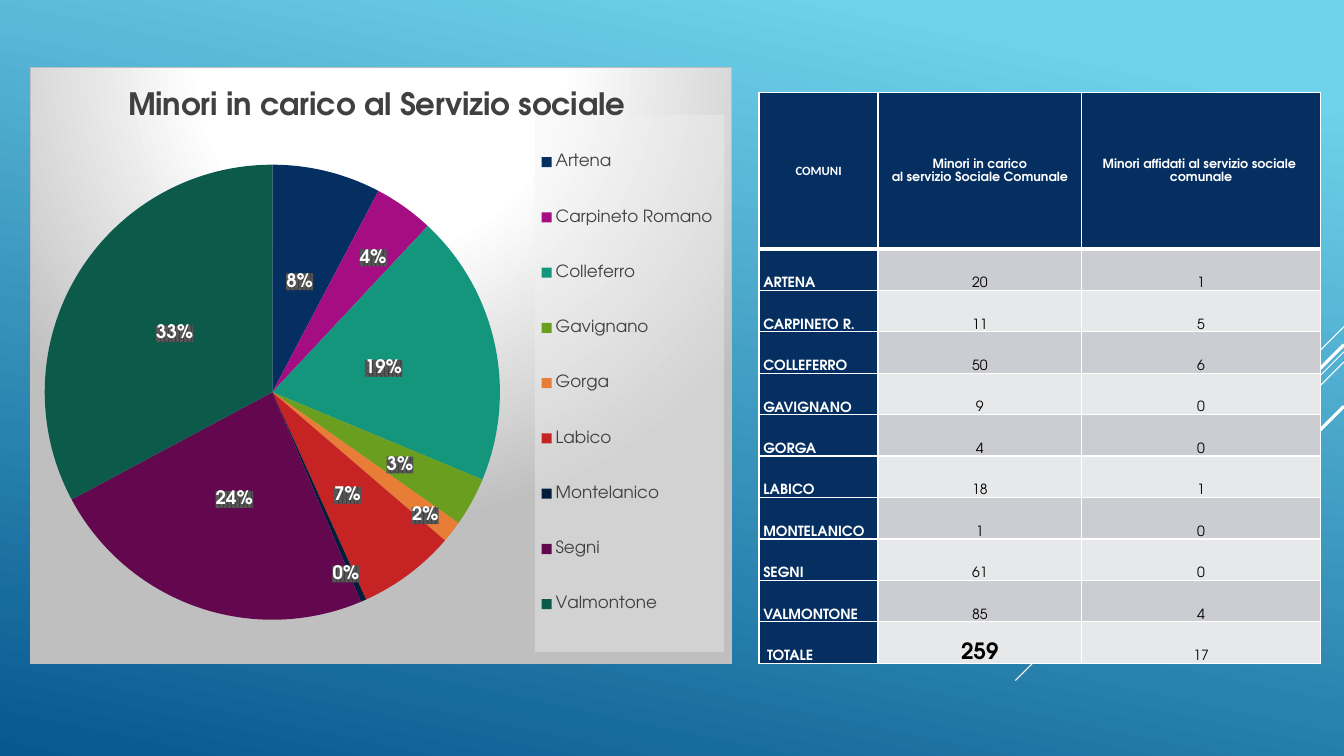
import copy
import dataclasses
import typing

import pptx
import pptx.chart.data
import pptx.dml.color
import pptx.enum.chart
import pptx.enum.shapes
import pptx.enum.text
import pptx.oxml
import pptx.oxml.ns
import pptx.util

Pt = pptx.util.Pt
FACE = "TeX Gyre Adventor"
WHITE, BLACK, NAVY, GREY = "FFFFFF", "000000", "052F61", "404040"
TITLE = "Minori in carico al Servizio sociale "


@dataclasses.dataclass
class Ray:
    top: float
    run: float
    width: float


@dataclasses.dataclass
class Town:
    label: str
    name: str
    cared: int
    placed: int
    tint: str
    shift: typing.Optional[tuple[float, float]] = None


@dataclasses.dataclass
class Style:
    size: float
    tint: str
    bold: bool = False
    face: str = FACE


RAYS = [
    Ray(233.3, 72, 0.75),
    Ray(251.3, 234.7, 0.75),
    Ray(258.5, 149.4, 0.75),
    Ray(246.2, 137.5, 2.25),
    Ray(290.2, 100.1, 2.25),
]
TOWNS = [
    Town("ARTENA", "Artena", 20, 1, NAVY),
    Town("CARPINETO R.", "Carpineto Romano ", 11, 5, "A50E82", (0.05, -0.07)),
    Town("COLLEFERRO", "Colleferro", 50, 6, "14967C"),
    Town("GAVIGNANO", "Gavignano", 9, 0, "6A9E1F", (0.04, 0.03)),
    Town("GORGA", "Gorga ", 4, 0, "E87D37", (0.09, 0.09)),
    Town("LABICO", "Labico ", 18, 1, "C62324", (0.01, 0.02)),
    Town("MONTELANICO", "Montelanico ", 1, 0, "031C3A", (0.04, 0.13)),
    Town("SEGNI", "Segni ", 61, 0, "63084E"),
    Town("VALMONTONE", "Valmontone ", 85, 4, "0C5A4A"),
]
HEADS = ["COMUNI", "Minori in carico\nal servizio Sociale Comunale",
         "Minori affidati al servizio sociale \ncomunale"]


def shade(text: str) -> pptx.dml.color.RGBColor:
    return pptx.dml.color.RGBColor.from_string(text)


def node(tag: str, body: str, extra: str = "") -> typing.Any:
    space = pptx.oxml.ns.nsdecls("a", "c")
    return pptx.oxml.parse_xml(f"<{tag} {space} {extra}>{body}</{tag}>")


def solid(tint: str, more: str = "") -> str:
    return f'<a:solidFill><a:srgbClr val="{tint}">{more}</a:srgbClr></a:solidFill>'


def dress(font: typing.Any, style: Style) -> None:
    font.size, font.bold, font.name = Pt(style.size), style.bold, style.face
    font.color.rgb = shade(style.tint)


def layout(x: float, y: float, size: typing.Optional[tuple[float, float]] = None,
           inner: bool = False) -> typing.Any:
    body = '<c:layoutTarget val="inner"/>' if inner else ""
    if size:
        body += '<c:xMode val="edge"/><c:yMode val="edge"/>'
    body += f'<c:x val="{x}"/><c:y val="{y}"/>'
    if size:
        body += f'<c:w val="{size[0]}"/><c:h val="{size[1]}"/>'
    return node("c:layout", f"<c:manualLayout>{body}</c:manualLayout>")


def draw_ray(slide: typing.Any, ray: Ray) -> None:
    line = slide.shapes.add_connector(
        pptx.enum.shapes.MSO_CONNECTOR.STRAIGHT,
        Pt(960), Pt(ray.top), Pt(960 - ray.run), Pt(ray.top + ray.run))
    line.line.color.rgb = shade(WHITE)
    line.line.width = Pt(ray.width)
    line.element.spPr.append(node("a:effectLst", ""))


def fill_cell(cell: typing.Any, text: str, style: Style, back: str,
              head: bool, left: bool) -> None:
    anchor, align = pptx.enum.text.MSO_ANCHOR, pptx.enum.text.PP_ALIGN
    cell.vertical_anchor = anchor.MIDDLE if head else anchor.BOTTOM
    cell.margin_left = cell.margin_right = Pt(3)
    cell.margin_top = cell.margin_bottom = Pt(0)
    para = cell.text_frame.paragraphs[0]
    para.alignment = align.LEFT if left else align.CENTER
    para.line_spacing, para.space_after = 1.15, Pt(10)
    for i, part in enumerate(text.split("\n")):
        if i:
            para.add_line_break()
        run = para.add_run()
        run.text = part
        dress(run.font, style)
    props = cell._tc.get_or_add_tcPr()
    for side in "LRTB":
        width = Pt(3 if head and side == "B" else 1)
        props.append(node(f"a:ln{side}", solid(WHITE), f'w="{width}"'))
    cell.fill.solid()
    cell.fill.fore_color.rgb = shade(back)


def draw_table(slide: typing.Any) -> None:
    total = ("\u00a0TOTALE".replace("\u00a0", " "), sum(t.cared for t in TOWNS), sum(t.placed for t in TOWNS))
    rows = [HEADS, *[(t.label, t.cared, t.placed) for t in TOWNS], total]
    table = slide.shapes.add_table(
        len(rows), 3, Pt(542.2), Pt(65.8), Pt(401), Pt(408)).table
    for col, width in zip(table.columns, (85, 145.4, 170.6)):
        col.width = Pt(width)
    for r, row in enumerate(rows):
        table.rows[r].height = Pt(29.6 if r else 112)
        for c, value in enumerate(row):
            head, last = r == 0, r == len(rows) - 1
            if head:
                style = Style(9, WHITE, True, FACE if c else "Calibri")
            elif c == 0:
                style = Style(10, WHITE, True)
            else:
                big = last and c == 1
                style = Style(16 if big else 10, BLACK, big)
            back = NAVY if head or c == 0 else "CCCDD2" if r % 2 else "E7E8EA"
            fill_cell(table.cell(r, c), str(value), style, back, head, not head and c == 0)


def draw_labels(chart: typing.Any) -> None:
    labels = chart.plots[0].series[0].data_labels
    labels.show_value, labels.show_percentage = False, True
    labels.number_format, labels.number_format_is_linked = "0%", False
    labels.position = pptx.enum.chart.XL_LABEL_POSITION.CENTER
    dress(labels.font, Style(13.3, WHITE, True))
    group = chart.element.xpath("//c:ser/c:dLbls")[0]
    text = group.xpath("c:txPr")[0]
    text.addprevious(node(
        "c:spPr", '<a:pattFill prst="pct75"><a:fgClr><a:srgbClr val="404040"/></a:fgClr>'
        '<a:bgClr><a:srgbClr val="595959"/></a:bgClr></a:pattFill>'))
    parts = group.xpath("*[not(self::c:showLeaderLines)]")
    spot = 0
    for i, town in enumerate(TOWNS):
        if town.shift:
            label = node("c:dLbl", f'<c:idx val="{i}"/>')
            label.append(layout(*town.shift))
            label.extend(copy.deepcopy(parts))
            group.insert(spot, label)
            spot += 1


def draw_chart(slide: typing.Any) -> None:
    data = pptx.chart.data.CategoryChartData()
    data.categories = [t.name for t in TOWNS]
    data.add_series(TITLE, [t.cared for t in TOWNS])
    chart = slide.shapes.add_chart(
        pptx.enum.chart.XL_CHART_TYPE.PIE, Pt(21.6), Pt(47.5), Pt(501), Pt(427), data).chart
    dress(chart.font, Style(10, WHITE))
    chart.has_title = True
    run = chart.chart_title.text_frame.paragraphs[0].add_run()
    run.text = TITLE
    dress(run.font, Style(22, GREY, True))
    chart.plots[0].vary_by_categories = True
    for i, town in enumerate(TOWNS):
        fill = chart.plots[0].series[0].points[i].format.fill
        fill.solid()
        fill.fore_color.rgb = shade(town.tint)
    draw_labels(chart)
    chart.has_legend = True
    chart.legend.position = pptx.enum.chart.XL_LEGEND_POSITION.RIGHT
    chart.legend.include_in_layout = False
    dress(chart.legend.font, Style(12, GREY))
    root = chart.element
    for old in root.xpath("//c:plotArea/c:layout | //c:legend/c:layout"):
        old.getparent().remove(old)
    root.xpath("//c:plotArea")[0].insert(0, layout(0.02, 0.16, (0.65, 0.77), True))
    root.xpath("//c:legend/c:overlay")[0].addprevious(layout(0.72, 0.08, (0.27, 0.9)))
    root.xpath("//c:legend/c:txPr")[0].addprevious(
        node("c:spPr", solid("F2F2F2", '<a:alpha val="39000"/>')))
    stops = "".join(f'<a:gs pos="{at}000"><a:srgbClr val="{tint}"/></a:gs>'
                    for at, tint in ((0, WHITE), (39, WHITE), (100, "BFBFBF")))
    root.xpath("c:txPr")[0].addprevious(node(
        "c:spPr", f'<a:gradFill><a:gsLst>{stops}</a:gsLst><a:path path="circle">'
        '<a:fillToRect l="50000" t="-80000" r="50000" b="180000"/></a:path></a:gradFill>'
        f'<a:ln w="{Pt(0.75)}">{solid("BFBFBF")}</a:ln>'))


def main() -> None:
    deck = pptx.Presentation()
    deck.slide_width, deck.slide_height = Pt(960), Pt(540)
    slide = deck.slides.add_slide(deck.slide_layouts[6])
    back = slide.background.fill
    back.gradient()
    back.gradient_angle = 258
    for stop, at, tint in zip(back.gradient_stops, (0.1, 1), ("6ED2EB", "06588E")):
        stop.position, stop.color.rgb = at, shade(tint)
    for ray in RAYS:
        draw_ray(slide, ray)
    draw_table(slide)
    draw_chart(slide)
    deck.save("out.pptx")


if __name__ == "__main__":
    main()
